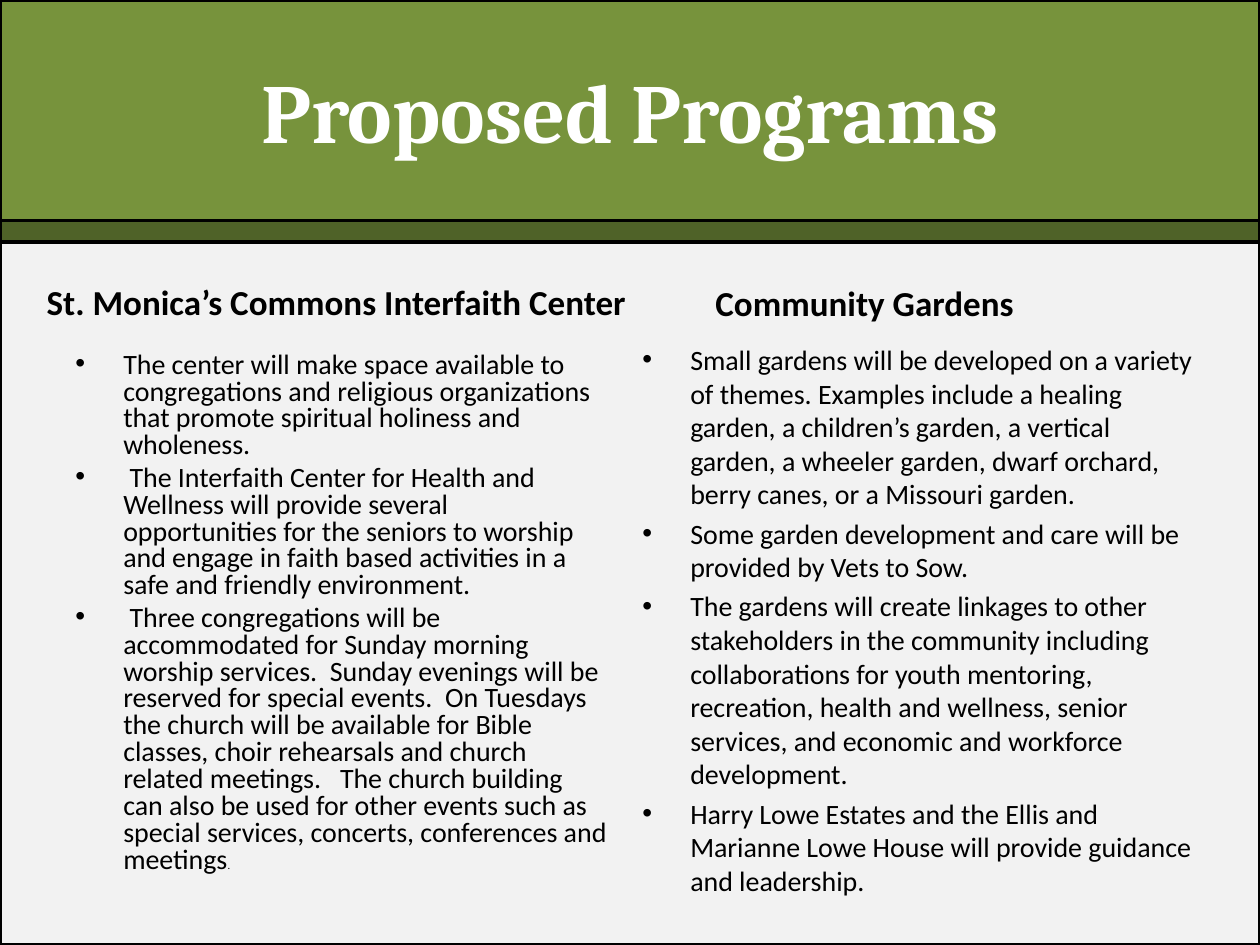
import dataclasses

import lxml.etree
import pptx
import pptx.dml.color
import pptx.enum.shapes
import pptx.enum.text
import pptx.oxml.ns
import pptx.util

Inches = pptx.util.Inches
Pt = pptx.util.Pt
ALIGN = pptx.enum.text.PP_ALIGN
ANCHOR = pptx.enum.text.MSO_ANCHOR


@dataclasses.dataclass(frozen=True)
class Theme:
    """Colours, fonts and type sizes of the deck."""

    banner: str = "77933C"
    stripe: str = "4F6228"
    panel: str = "F2F2F2"
    ink: str = "000000"
    light: str = "FFFFFF"
    title_font: str = "Cambria"
    body_font: str = "Calibri"
    title_size: float = 48
    heading_size: float = 20
    body_size: float = 16
    stop_size: float = 6
    outline: float = 2
    space_ratio: float = 0.2
    indent: float = 0.38


THEME = Theme()

CENTER_HEADING = "St. Monica’s Commons Interfaith Center"
CENTER_ITEMS = [
    ["The center will make space available to congregations and religious "
     "organizations that promote spiritual holiness and wholeness."],
    [" The Interfaith Center for Health and Wellness will provide several "
     "opportunities for the seniors to worship and engage in faith based "
     "activities in a safe and friendly environment."],
    [" Three congregations will be accommodated for Sunday morning worship "
     "services.  Sunday evenings will be reserved for special events.  On "
     "Tuesdays the church will be available for Bible classes, choir "
     "rehearsals and church related meetings.   The church building can also "
     "be used for other events such as special services, concerts, "
     "conferences and meetings", (".", THEME.stop_size)],
]
GARDEN_HEADING = "Community Gardens"
GARDEN_ITEMS = [
    ["Small gardens will be developed on a variety of themes. Examples "
     "include a healing garden, a children’s garden, a vertical garden, a "
     "wheeler garden, dwarf orchard, berry canes, or a Missouri garden."],
    ["Some garden development and care will be provided by Vets to Sow."],
    ["The gardens will create linkages to other stakeholders in the community "
     "including collaborations for youth mentoring, recreation, health and "
     "wellness, senior services, and economic and workforce development."],
    ["Harry Lowe Estates and the Ellis and Marianne Lowe House will provide "
     "guidance and leadership."],
]


def apply_format(target, values):
    """Set each named attribute of the target."""
    for name, value in values.items():
        setattr(target, name, value)


def add_panel(page, box, color):
    """Add an outlined rectangle filled with one colour."""
    panel = page.shapes.add_shape(
        pptx.enum.shapes.MSO_SHAPE.RECTANGLE, *map(Inches, box))
    panel.shadow.inherit = False
    panel.fill.solid()
    panel.fill.fore_color.rgb = pptx.dml.color.RGBColor.from_string(color)
    panel.line.color.rgb = pptx.dml.color.RGBColor.from_string(THEME.ink)
    panel.line.width = Pt(THEME.outline)


def add_frame(page, box, anchor):
    """Add a wrapping text box and return its text frame."""
    frame = page.shapes.add_textbox(*map(Inches, box)).text_frame
    apply_format(frame, {"word_wrap": True, "vertical_anchor": anchor})
    return frame


def add_span(para, text, size, font=THEME.body_font, color=THEME.ink, bold=False):
    """Add a formatted run to a paragraph."""
    span = para.add_run()
    span.text = text
    apply_format(span.font, {"name": font, "size": Pt(size), "bold": bold})
    span.font.color.rgb = pptx.dml.color.RGBColor.from_string(color)


def add_bullet(para):
    """Give a paragraph a hanging bullet."""
    properties = para._p.get_or_add_pPr()
    indent = Inches(THEME.indent)
    properties.set("marL", str(indent))
    properties.set("indent", str(-indent))
    font = lxml.etree.SubElement(properties, pptx.oxml.ns.qn("a:buFont"))
    font.set("typeface", "Arial")
    bullet = lxml.etree.SubElement(properties, pptx.oxml.ns.qn("a:buChar"))
    bullet.set("char", "•")


def add_banner(page, box):
    """Place the title centred in the banner."""
    para = add_frame(page, box, ANCHOR.MIDDLE).paragraphs[0]
    para.alignment = ALIGN.CENTER
    add_span(para, "Proposed Programs", THEME.title_size,
             THEME.title_font, THEME.light, True)


def add_heading(page, box, text, alignment):
    """Place a column heading at the bottom of its box."""
    para = add_frame(page, box, ANCHOR.BOTTOM).paragraphs[0]
    apply_format(para, {
        "alignment": alignment,
        "space_before": Pt(THEME.heading_size * THEME.space_ratio),
    })
    add_span(para, text, THEME.heading_size, bold=True)


def add_bullets(page, box, items, line_spacing):
    """Place a bulleted list, each item being a list of spans."""
    frame = add_frame(page, box, ANCHOR.TOP)
    for index, item in enumerate(items):
        para = frame.add_paragraph() if index else frame.paragraphs[0]
        apply_format(para, {
            "line_spacing": line_spacing,
            "space_before": Pt(THEME.body_size * THEME.space_ratio),
        })
        add_bullet(para)
        for part in item:
            text, size = (part, THEME.body_size) if isinstance(part, str) else part
            add_span(para, text, size)


def main():
    """Build and save the deck."""
    deck = pptx.Presentation()
    apply_format(deck, {"slide_width": Inches(10), "slide_height": Inches(7.5)})
    page = deck.slides.add_slide(deck.slide_layouts[6])
    banner = (0, 0, 10, 1.75)
    add_panel(page, (0, 1.92, 10, 5.58), THEME.panel)
    add_panel(page, banner, THEME.banner)
    add_panel(page, (0, 1.75, 10, 0.17), THEME.stripe)
    add_banner(page, banner)
    add_heading(page, (0.17, 2.08, 5, 0.53), CENTER_HEADING, ALIGN.CENTER)
    add_bullets(page, (0.5, 2.75, 4.42, 4.17), CENTER_ITEMS, 0.8)
    add_heading(page, (5.58, 1.92, 4.42, 0.7), GARDEN_HEADING, ALIGN.LEFT)
    add_bullets(page, (5, 2.67, 4.59, 4.32), GARDEN_ITEMS, 1.0)
    deck.save("out.pptx")


if __name__ == "__main__":
    main()
